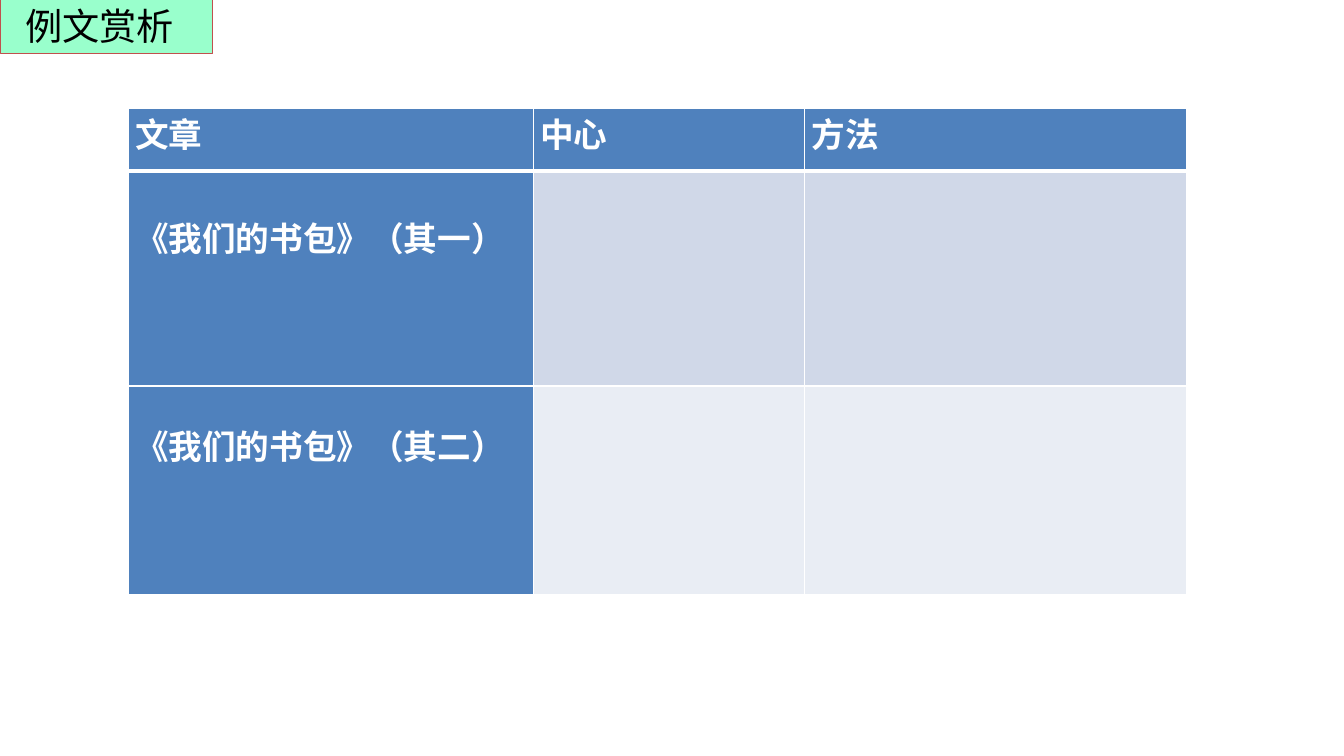
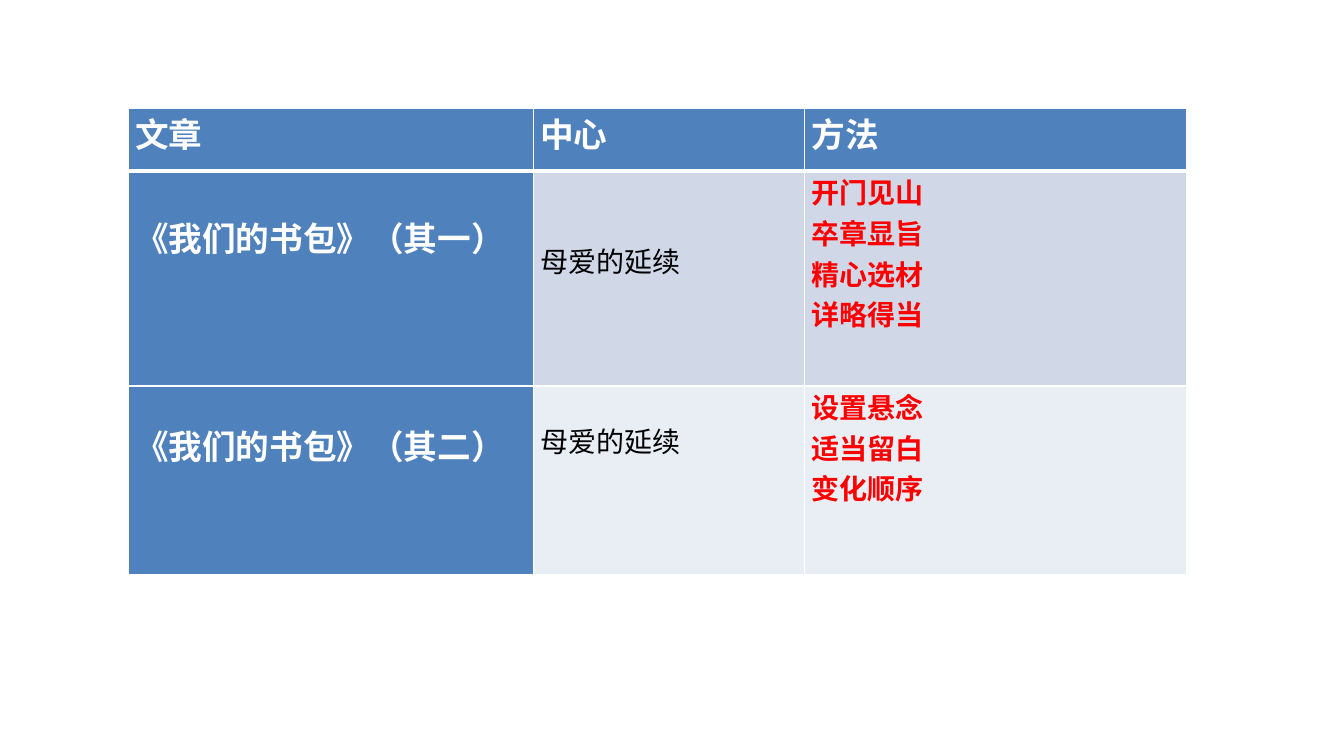
from lxml import etree
from pptx import Presentation
from pptx.dml.color import RGBColor
from pptx.enum import shapes, text
from pptx.oxml import ns
from pptx.util import Inches, Pt

WHITE = RGBColor(0xFF, 0xFF, 0xFF)
BLACK = RGBColor(0x00, 0x00, 0x00)
RED = RGBColor(0xFF, 0x00, 0x00)
BLUE = RGBColor(0x4F, 0x81, 0xBD)
BAND_DARK = RGBColor(0xD0, 0xD8, 0xE8)
BAND_LIGHT = RGBColor(0xE9, 0xED, 0xF4)
MINT = RGBColor(0x99, 0xFF, 0xCC)
BRICK = RGBColor(0xC0, 0x50, 0x4D)

COLUMNS = (4.02, 2.69, 3.79)
HEADINGS = ("文章", "中心", "方法")
ESSAYS = ("《我们的书包》（其一）", "《我们的书包》（其二）")
ESSAY_OFFSETS = (0.41, 0.34)
THEME_OFFSETS = (0.68, 0.34)
BANDS = (BAND_DARK, BAND_LIGHT)


def write_lines(frame, lines, size, color, bold=False, font="Calibri"):
    for index, line in enumerate(lines):
        paragraph = frame.paragraphs[0] if index == 0 else frame.add_paragraph()
        paragraph.alignment = text.PP_ALIGN.LEFT
        run = paragraph.add_run()
        run.text = line
        run.font.size = Pt(size)
        run.font.name = font
        run.font.bold = bold
        run.font.color.rgb = color


def add_border(cell, side, width):
    line = etree.SubElement(cell._tc.get_or_add_tcPr(), ns.qn(f"a:ln{side}"), w=str(Pt(width)))
    fill = etree.SubElement(line, ns.qn("a:solidFill"))
    etree.SubElement(fill, ns.qn("a:srgbClr"), val=str(WHITE))


def style_cell(cell, fill, top=0, rule_above=1, rule_below=1):
    for side, width in (("L", 1), ("R", 1), ("T", rule_above), ("B", rule_below)):
        add_border(cell, side, width)
    cell.fill.solid()
    cell.fill.fore_color.rgb = fill
    cell.margin_left = cell.margin_right = Inches(0.07)
    cell.margin_top, cell.margin_bottom = Inches(top), 0


def add_essay_table(slide, left, top, row_heights, answers):
    table = slide.shapes.add_table(
        len(row_heights), len(COLUMNS), Inches(left), Inches(top),
        Inches(sum(COLUMNS)), Inches(sum(row_heights))).table
    for column, width in zip(table.columns, COLUMNS):
        column.width = Inches(width)
    for row, height in zip(table.rows, row_heights):
        row.height = Inches(height)

    for column, heading in enumerate(HEADINGS):
        cell = table.cell(0, column)
        style_cell(cell, BLUE, rule_below=3)
        write_lines(cell.text_frame, [heading], 24, WHITE, bold=True)

    for index, (essay, band, (theme, methods)) in enumerate(zip(ESSAYS, BANDS, answers)):
        rule_above = 3 if index == 0 else 1
        essay_cell, theme_cell, method_cell = (table.cell(index + 1, c) for c in range(3))
        style_cell(essay_cell, BLUE, ESSAY_OFFSETS[index], rule_above)
        style_cell(theme_cell, band, THEME_OFFSETS[index], rule_above)
        style_cell(method_cell, band, 0, rule_above)
        write_lines(essay_cell.text_frame, [essay], 24, WHITE, bold=True)
        write_lines(theme_cell.text_frame, theme, 20, BLACK)
        write_lines(method_cell.text_frame, methods, 20, RED, bold=True)


def add_section_tag(slide, left, top, width, height, label):
    tag = slide.shapes.add_shape(
        shapes.MSO_SHAPE.RECTANGLE, Inches(left), Inches(top), Inches(width), Inches(height))
    tag.shadow.inherit = False
    tag.fill.solid()
    tag.fill.fore_color.rgb = MINT
    tag.line.color.rgb = BRICK
    tag.line.width = Pt(0.5)
    frame = tag.text_frame
    frame.word_wrap = True
    frame.vertical_anchor = text.MSO_ANCHOR.MIDDLE
    frame.margin_left, frame.margin_right = Inches(0.25), Inches(0.1)
    frame.margin_top = frame.margin_bottom = 0
    write_lines(frame, [label], 26.6, BLACK, font="Arial")


def add_essay_slide(deck, last_row_height, answers):
    slide = deck.slides.add_slide(deck.slide_layouts[6])
    add_essay_table(slide, 1.27, 1.08, (0.62, 2.13, last_row_height), answers)
    return slide


def main():
    deck = Presentation()
    deck.slide_width, deck.slide_height = Inches(13.33), Inches(7.5)

    question = add_essay_slide(deck, 2.07, [([], []), ([], [])])
    add_section_tag(question, 0, -0.02, 2.11, 0.55, "例文赏析")

    add_essay_slide(deck, 1.87, [
        (["母爱的延续"], ["开门见山", "卒章显旨", "精心选材", "详略得当"]),
        (["母爱的延续"], ["设置悬念", "适当留白", "变化顺序"]),
    ])
    deck.save("out.pptx")


if __name__ == "__main__":
    main()
